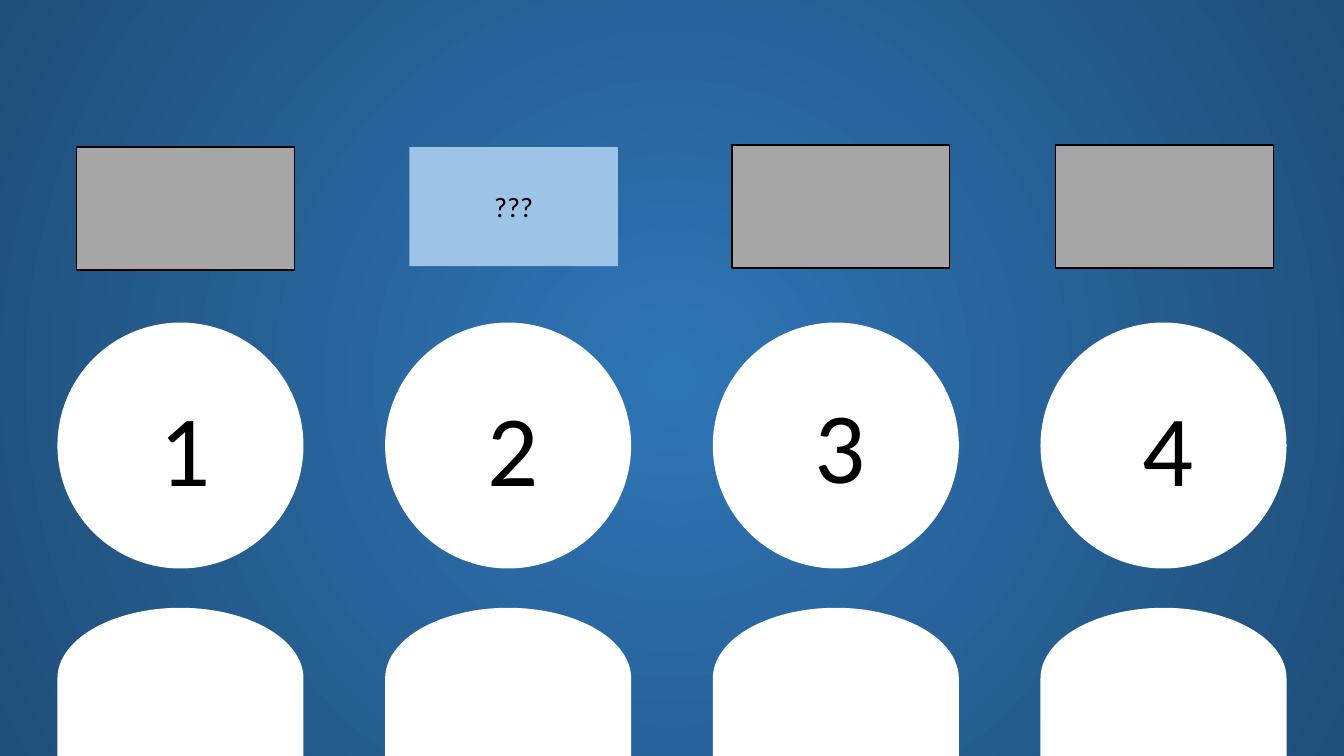
from lxml.etree import SubElement
from pptx import Presentation
from pptx.dml.color import RGBColor
from pptx.enum.shapes import MSO_SHAPE
from pptx.enum.text import MSO_ANCHOR, MSO_AUTO_SIZE, PP_ALIGN
from pptx.oxml.ns import qn
from pptx.util import Inches, Pt

COLORS = {
    "center": "2E75B6",
    "edge": "1F4E79",
    "figure": "FFFFFF",
    "open_card": "9DC3E6",
    "closed_card": "A6A6A6",
    "ink": "000000",
}


class SlideBuilder:
    """Holds the style and the current slide."""

    font_name = "Calibri"

    def __init__(self, page):
        self.page = page

    def color(self, name):
        return RGBColor.from_string(COLORS[name])

    def radial_background(self, inner, outer):
        fill = self.page.background.fill
        fill.gradient()
        for stop, name in zip(fill.gradient_stops, (inner, outer)):
            stop.color.rgb = self.color(name)
        # Swap the linear direction for a circle around the centre
        gradient = next(self.page.element.iter(qn("a:gradFill")))
        gradient.remove(gradient.find(qn("a:lin")))
        circle = SubElement(gradient, qn("a:path"), {"path": "circle"})
        sides = {side: "50000" for side in "ltrb"}
        SubElement(circle, qn("a:fillToRect"), sides)

    def shape(self, kind, left, top, width, height, fill, line=None, rotation=0):
        shape = self.page.shapes.add_shape(
            kind, Inches(left), Inches(top), Inches(width), Inches(height))
        shape.shadow.inherit = False
        shape.rotation = rotation
        shape.fill.solid()
        shape.fill.fore_color.rgb = self.color(fill)
        if line:
            shape.line.color.rgb = self.color(line)
            shape.line.width = Pt(1)
        else:
            shape.line.fill.background()
        return shape

    def set_text(self, box, text, size):
        para = box.text_frame.paragraphs[0]
        para.text = text
        para.alignment = PP_ALIGN.CENTER
        para.font.name = self.font_name
        para.font.size = Pt(size)
        para.font.color.rgb = self.color("ink")

    def label(self, left, top, width, height, text, size):
        box = self.page.shapes.add_textbox(
            Inches(left), Inches(top), Inches(width), Inches(height))
        box.text_frame.word_wrap = True
        box.text_frame.auto_size = MSO_AUTO_SIZE.SHAPE_TO_FIT_TEXT
        self.set_text(box, text, size)

    def figure(self, left):
        head, body_length, body_top = 2.44, 4.35, 6.03
        self.shape(MSO_SHAPE.OVAL, left, 3.2, head, head, "figure")
        # The body is a terminator turned upright, centred below the head
        offset = (body_length - head) / 2
        self.shape(MSO_SHAPE.FLOWCHART_TERMINATOR, left - offset, body_top + offset,
                   body_length, head, "figure", rotation=90)

    def closed_card(self, left, top):
        self.shape(MSO_SHAPE.RECTANGLE, left, top, 2.16, 1.22, "closed_card", line="ink")

    def open_card(self, left, top, text):
        card = self.shape(MSO_SHAPE.RECTANGLE, left, top, 2.07, 1.18, "open_card")
        card.text_frame.vertical_anchor = MSO_ANCHOR.MIDDLE
        self.set_text(card, text, 20)


def main():
    deck = Presentation()
    deck.slide_width, deck.slide_height = Inches(13.33), Inches(7.5)
    builder = SlideBuilder(deck.slides.add_slide(deck.slide_layouts[6]))
    builder.radial_background("center", "edge")

    # Four players, evenly spaced
    first_left, pitch = 0.57, 3.25
    player_lefts = [first_left + pitch * index for index in range(4)]
    for left in player_lefts:
        builder.figure(left)

    # Player numbers
    number_tops = (3.78, 3.78, 3.75, 3.78)
    for number, (left, top) in enumerate(zip(player_lefts, number_tops), start=1):
        builder.label(left + 0.64, top, 1.25, 1.31, str(number), 72)

    # Cards above the players
    builder.open_card(4.06, 1.46, "???")
    for left, top in ((10.47, 1.44), (7.26, 1.44), (0.76, 1.46)):
        builder.closed_card(left, top)

    deck.save("out.pptx")


if __name__ == "__main__":
    main()
